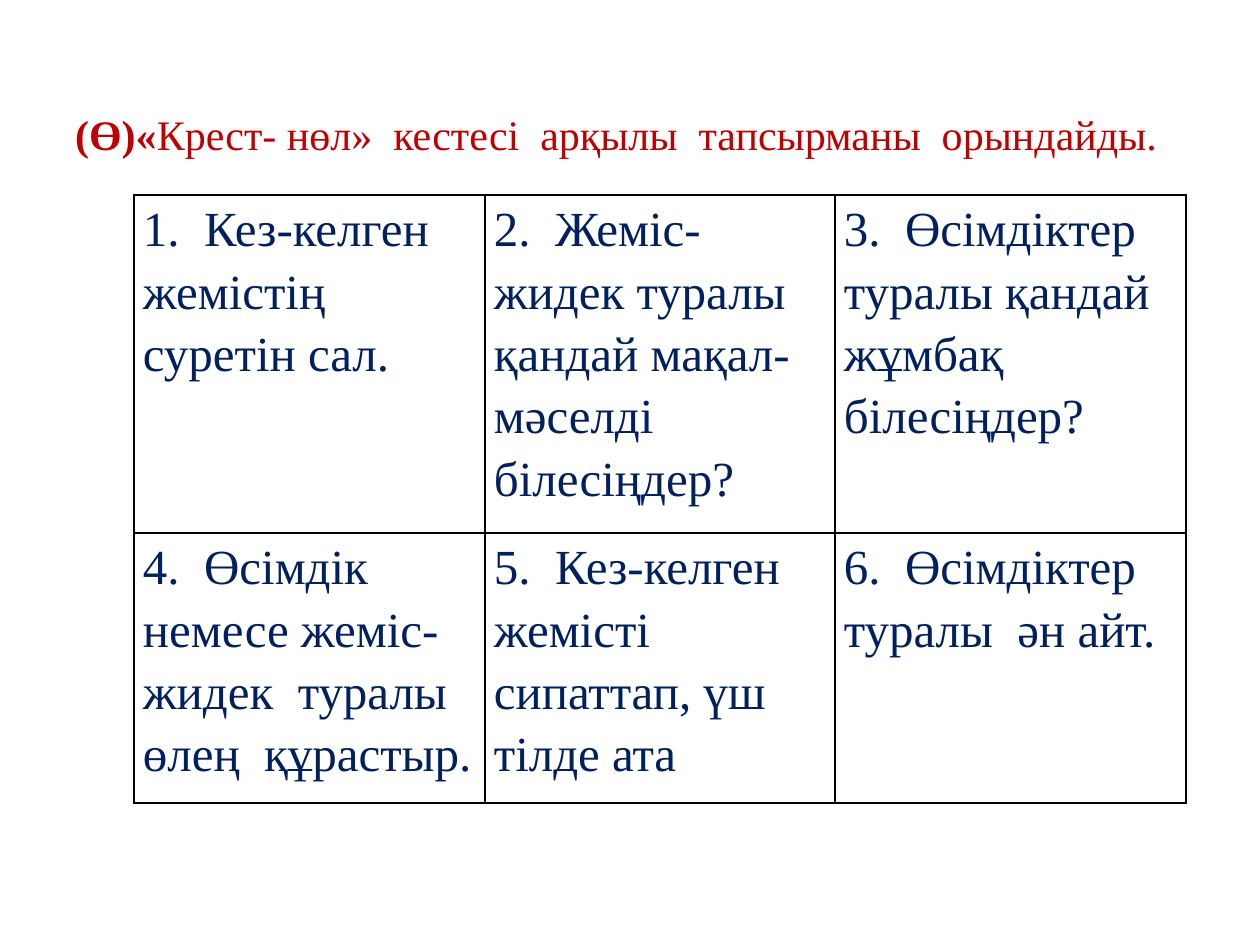
from lxml.etree import SubElement
from pptx import Presentation
from pptx.dml.color import RGBColor
from pptx.oxml.ns import qn
from pptx.util import Emu, Pt

PX = 914400 // 126
FONT = "Times New Roman"
COLORS = {"heading": "C00000", "task": "002060", "border": "000000"}

HEADING = [
    (" ", {"size": 14, "bold": True}),
    ("(Ө)«", {"size": 24, "bold": True}),
    ("Крест- нөл»  кестесі  арқылы  тапсырманы  орындайды.", {"size": 24}),
]
TASKS = [
    [
        "1.  Кез-келген жемістің суретін сал.",
        "2.  Жеміс-жидек туралы  қандай мақал-мәселді білесіңдер?",
        "3.  Өсімдіктер туралы қандай  жұмбақ білесіңдер?",
    ],
    [
        "4.  Өсімдік немесе жеміс-жидек  туралы өлең  құрастыр.",
        "5.  Кез-келген жемісті  сипаттап, үш тілде ата",
        "6.  Өсімдіктер туралы  ән айт.",
    ],
]


def px(length):
    return Emu(length * PX)


def add_span(para, text, size, color, bold=False):
    span = para.add_run()
    span.text = text
    span.font.name = FONT
    span.font.size = Pt(size)
    span.font.bold = bold
    span.font.color.rgb = RGBColor.from_string(COLORS[color])


def add_borders(cell, color, width=1):
    properties = cell._tc.get_or_add_tcPr()
    for side in ("lnL", "lnR", "lnT", "lnB"):
        line = SubElement(properties, qn(f"a:{side}"), w=str(Pt(width)))
        fill = SubElement(line, qn("a:solidFill"))
        SubElement(fill, qn("a:srgbClr"), val=COLORS[color])


def add_plain_table(page, left, top, column_widths, row_heights):
    """Add a table without style bands."""
    table = page.shapes.add_table(
        len(row_heights), len(column_widths), px(left), px(top),
        px(sum(column_widths)), px(sum(row_heights))).table
    table.first_row = table.horz_banding = False
    for column, width in zip(table.columns, column_widths):
        column.width = px(width)
    for row, height in zip(table.rows, row_heights):
        row.height = px(height)
    return table


def fill_cell(cell, spans, color, margin, border=None):
    cell.margin_left = cell.margin_right = px(margin)
    cell.margin_top = cell.margin_bottom = 0
    if border:
        add_borders(cell, border)
    cell.fill.background()
    para = cell.text_frame.paragraphs[0]
    para.line_spacing = 1.15
    for text, style in spans:
        add_span(para, text, color=color, **style)


def main():
    deck = Presentation()
    deck.slide_width, deck.slide_height = px(1260), px(945)
    page = deck.slides.add_slide(deck.slide_layouts[6])

    heading = add_plain_table(page, 54, 106, [1170], [53])
    fill_cell(heading.cell(0, 0), HEADING, "heading", margin=15)

    grid = add_plain_table(page, 134, 195, [351, 350, 351], [338, 270])
    for row, texts in enumerate(TASKS):
        for column, text in enumerate(texts):
            fill_cell(grid.cell(row, column), [(text, {"size": 28})], "task",
                      margin=9, border="border")

    deck.save("out.pptx")


if __name__ == "__main__":
    main()
